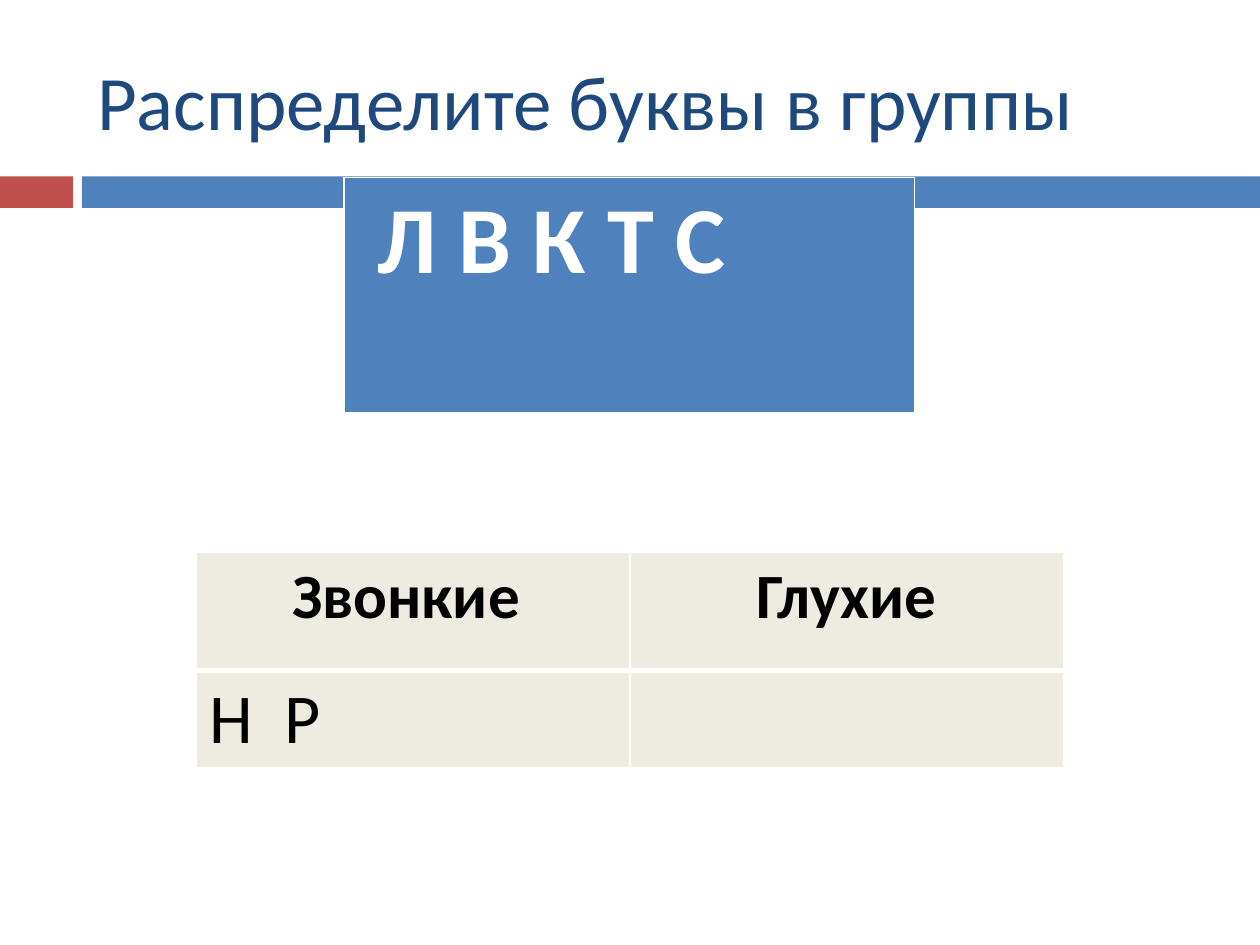
from dataclasses import dataclass

from lxml import etree
from pptx import Presentation
from pptx.dml.color import RGBColor
from pptx.enum.shapes import MSO_SHAPE
from pptx.enum.text import MSO_ANCHOR, PP_ALIGN
from pptx.oxml.ns import qn
from pptx.util import Inches, Pt

RECTANGLE = MSO_SHAPE.RECTANGLE
MIDDLE = MSO_ANCHOR.MIDDLE
LEFT, CENTER = PP_ALIGN.LEFT, PP_ALIGN.CENTER


@dataclass(frozen=True)
class Theme:
    font: str = "Calibri"
    title: str = "1F497D"
    accent: str = "C0504D"
    blue: str = "4F81BD"
    cell: str = "EEECE1"
    white: str = "FFFFFF"
    black: str = "000000"
    title_size: int = 44
    letters_size: int = 54
    heading_size: int = 36
    body_size: int = 40
    thin: int = 1
    thick: int = 3


THEME = Theme()


def format_text(text_frame, size, color, bold=False, alignment=LEFT):
    for paragraph in text_frame.paragraphs:
        paragraph.alignment = alignment
        for run in paragraph.runs:
            run.font.name = THEME.font
            run.font.size = Pt(size)
            run.font.bold = bold
            run.font.color.rgb = RGBColor.from_string(color)


def add_title(slide, text):
    title = slide.shapes.title
    title.left, title.top = Inches(0.67), Inches(0.25)
    title.width, title.height = Inches(8.92), Inches(1.08)
    title.text_frame.text = text
    title.text_frame.vertical_anchor = MIDDLE
    format_text(title.text_frame, THEME.title_size, THEME.title)


def add_bar(slide, left, width, color):
    bar = slide.shapes.add_shape(
        RECTANGLE, Inches(left), Inches(1.4), Inches(width), Inches(0.25)
    )
    bar.shadow.inherit = False
    bar.fill.solid()
    bar.fill.fore_color.rgb = RGBColor.from_string(color)
    bar.line.fill.background()


def set_borders(cell, top, bottom):
    properties = cell._tc.get_or_add_tcPr()
    widths = {"a:lnL": THEME.thin, "a:lnR": THEME.thin, "a:lnT": top, "a:lnB": bottom}
    for tag, width in widths.items():
        line = etree.SubElement(properties, qn(tag), w=str(Pt(width)))
        fill = etree.SubElement(line, qn("a:solidFill"))
        etree.SubElement(fill, qn("a:srgbClr"), val=THEME.white)


def fill_cell(cell, text, fill, size, color, bold, alignment, top, bottom):
    set_borders(cell, top, bottom)
    cell.fill.solid()
    cell.fill.fore_color.rgb = RGBColor.from_string(fill)
    if text:
        cell.text_frame.text = text
        format_text(cell.text_frame, size, color, bold, alignment)


def add_table(slide, left, top, column_widths, row_heights):
    table = slide.shapes.add_table(
        len(row_heights), len(column_widths), Inches(left), Inches(top),
        Inches(sum(column_widths)), Inches(sum(row_heights)),
    ).table
    for column, width in zip(table.columns, column_widths):
        column.width = Inches(width)
    for row, height in zip(table.rows, row_heights):
        row.height = Inches(height)
    return table


def add_letters(slide, text):
    table = add_table(slide, 2.73, 1.41, [4.53], [1.88])
    fill_cell(table.cell(0, 0), text, THEME.blue, THEME.letters_size, THEME.white,
              True, LEFT, THEME.thin, THEME.thick)


def add_groups(slide, groups):
    table = add_table(slide, 1.56, 4.38, [3.44] * len(groups), [0.94, 0.77])
    for column, (heading, letters) in enumerate(groups):
        fill_cell(table.cell(0, column), heading, THEME.cell, THEME.heading_size,
                  THEME.black, True, CENTER, THEME.thin, THEME.thick)
        fill_cell(table.cell(1, column), letters, THEME.cell, THEME.body_size,
                  THEME.black, False, LEFT, THEME.thick, THEME.thin)


def main():
    presentation = Presentation()
    presentation.slide_width, presentation.slide_height = Inches(10), Inches(7.5)
    slide = presentation.slides.add_slide(presentation.slide_layouts[5])
    add_bar(slide, 0, 0.58, THEME.accent)
    add_bar(slide, 0.65, 9.35, THEME.blue)
    add_title(slide, "Распределите буквы в группы")
    add_letters(slide, " Л В К Т С")
    add_groups(slide, [("Звонкие ", "Н  Р"), ("Глухие", "")])
    presentation.save("out.pptx")


if __name__ == "__main__":
    main()
